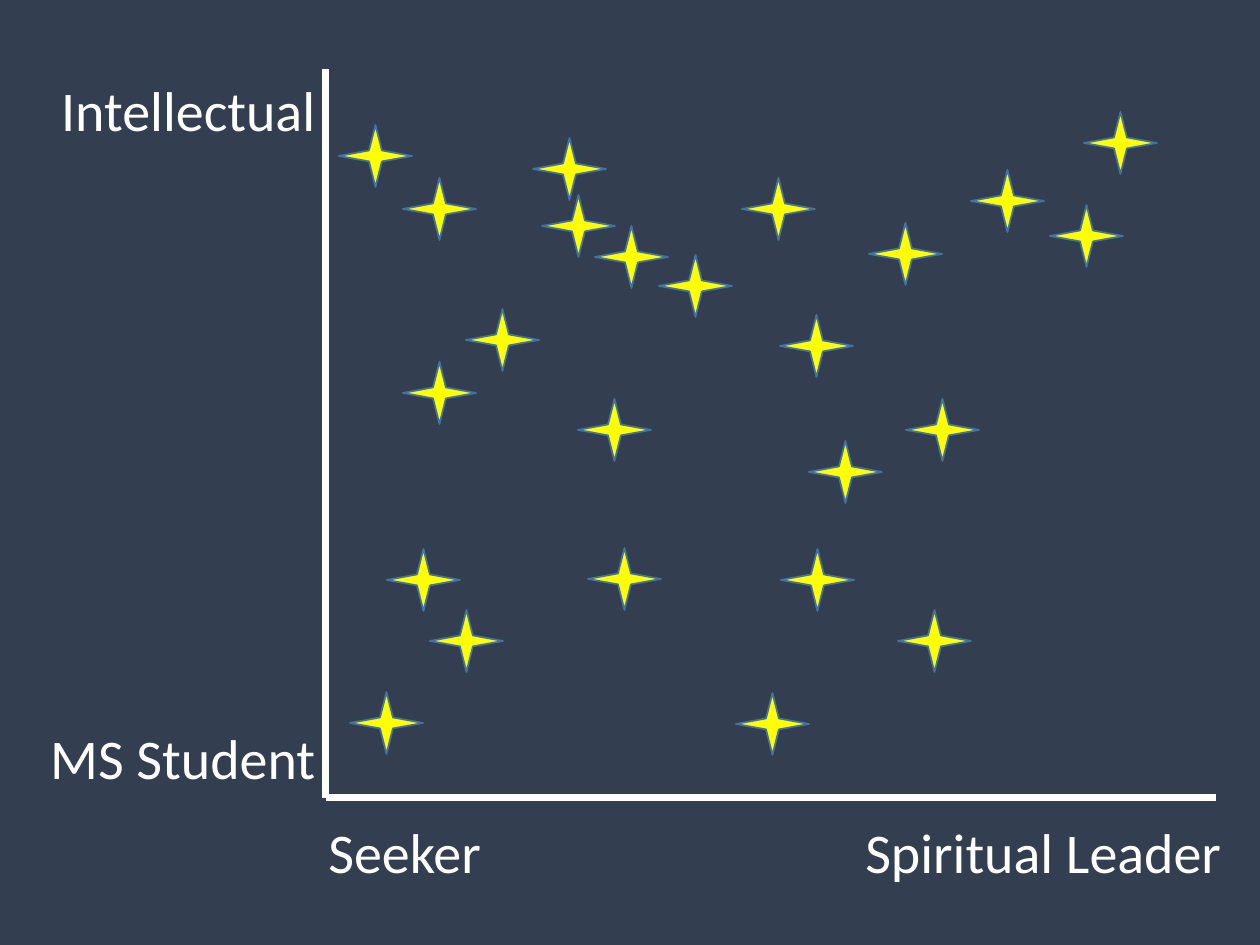
from lxml.etree import SubElement
from pptx import Presentation
from pptx.dml.color import RGBColor
from pptx.enum.shapes import MSO_CONNECTOR, MSO_SHAPE
from pptx.enum.text import MSO_AUTO_SIZE, PP_ALIGN
from pptx.oxml.ns import qn
from pptx.util import Emu, Pt

PX_PER_INCH = 126
COLORS = {"background": "333F50", "white": "FFFFFF", "star": "FFFF00", "star_edge": "43739E"}
STAR_WIDTH, STAR_HEIGHT = 73, 62
ORIGIN_X, ORIGIN_Y = 326, 798
AXIS_TOP, AXIS_RIGHT = 69, 1216
LABEL_WIDTH, LABEL_HEIGHT = 300, 81

# Left and top of each star
STARS = [
    (736, 693), (350, 692), (898, 610), (1084, 112), (971, 170), (533, 138),
    (542, 195), (595, 226), (659, 255), (742, 178), (869, 223), (403, 178),
    (1050, 205), (339, 125), (588, 548), (387, 549), (781, 549), (430, 610),
    (403, 362), (466, 309), (780, 315), (578, 399), (809, 441), (906, 399),
]


def px(*lengths):
    """Turn pixel lengths into a list of EMU."""
    return [Emu(round(length * 914400 / PX_PER_INCH)) for length in lengths]


def color(name):
    return RGBColor.from_string(COLORS[name])


class ScatterSlide:
    font_name = "Calibri"
    font_size = Pt(32)
    axis_width = Pt(4)
    star_line_width = Pt(1)

    def __init__(self, page):
        self.page = page
        fill = page.background.fill
        fill.solid()
        fill.fore_color.rgb = color("background")

    def axes(self, *lines):
        """Draw straight lines, each (x1, y1, x2, y2), as one group."""
        group = self.page.shapes.add_group_shape()
        for ends in lines:
            axis = group.shapes.add_connector(MSO_CONNECTOR.STRAIGHT, *px(*ends))
            axis.line.color.rgb = color("white")
            axis.line.width = self.axis_width
            SubElement(axis._element.spPr, qn("a:effectLst"))

    def label(self, text, left, top, width=LABEL_WIDTH, align=PP_ALIGN.RIGHT):
        box = self.page.shapes.add_textbox(*px(left, top, width, LABEL_HEIGHT))
        frame = box.text_frame
        frame.word_wrap = True
        frame.auto_size = MSO_AUTO_SIZE.SHAPE_TO_FIT_TEXT
        para = frame.paragraphs[0]
        para.text = text
        para.alignment = align
        para.font.name = self.font_name
        para.font.size = self.font_size
        para.font.color.rgb = color("white")

    def star(self, left, top):
        star = self.page.shapes.add_shape(
            MSO_SHAPE.STAR_4_POINT, *px(left, top, STAR_WIDTH, STAR_HEIGHT))
        star.shadow.inherit = False
        star.fill.solid()
        star.fill.fore_color.rgb = color("star")
        star.line.color.rgb = color("star_edge")
        star.line.width = self.star_line_width


def main():
    deck = Presentation()
    deck.slide_width, deck.slide_height = px(1260, 945)
    slide = ScatterSlide(deck.slides.add_slide(deck.slide_layouts[6]))

    slide.axes((ORIGIN_X, AXIS_TOP, ORIGIN_X, ORIGIN_Y),
               (AXIS_RIGHT, ORIGIN_Y, ORIGIN_X, ORIGIN_Y))
    slide.label("Intellectual", 28, AXIS_TOP)
    slide.label("MS Student", 28, ORIGIN_Y - LABEL_HEIGHT)
    slide.label("Seeker", 316, 811, align=PP_ALIGN.LEFT)
    slide.label("Spiritual Leader", 851, 811, width=383)
    for left, top in STARS:
        slide.star(left, top)

    deck.save("out.pptx")


if __name__ == "__main__":
    main()
